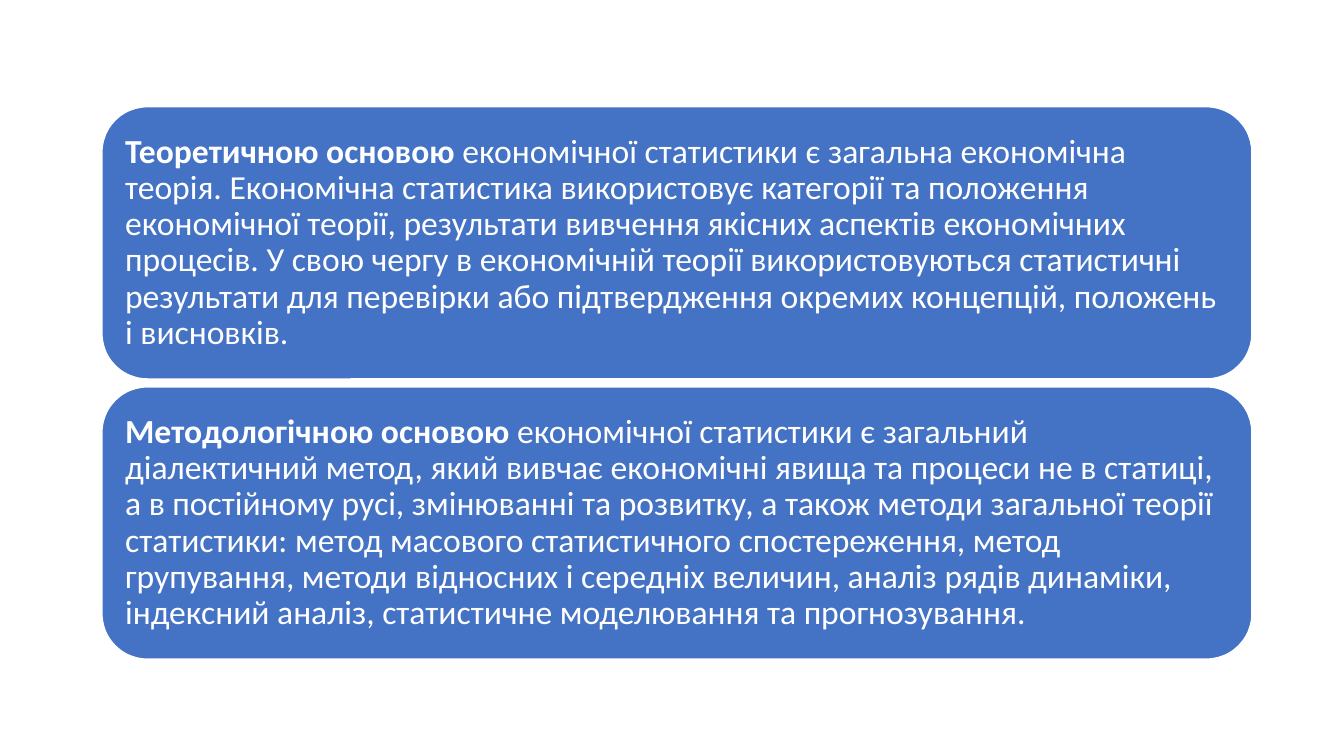
from dataclasses import dataclass

from pptx import Presentation
from pptx.dml.color import RGBColor
from pptx.enum.shapes import MSO_SHAPE as Shape
from pptx.enum.text import MSO_ANCHOR as Anchor, PP_ALIGN as Align
from pptx.util import Cm, Pt

BLUE, WHITE = "4472C4", "FFFFFF"
LEFT, TOP, WIDTH, HEIGHT = 2.57, 2.69, 28.98, 6.86
GAP = 0.2
FRAME = {
    "word_wrap": True,
    "vertical_anchor": Anchor.MIDDLE,
    "margin_left": Cm(0.25),
    "margin_right": Cm(0.25),
    "margin_top": Cm(0.25),
    "margin_bottom": Cm(0.25),
}
PARA = {"alignment": Align.LEFT, "line_spacing": 0.9}
FONT = {"name": "Calibri", "size": Pt(24)}


@dataclass(frozen=True)
class Card:
    term: str
    body: str


CARDS = (
    Card(
        "Теоретичною основою ",
        "економічної статистики є загальна економічна теорія. "
        "Економічна статистика використовує категорії та положення "
        "економічної теорії, результати вивчення якісних аспектів "
        "економічних процесів. У свою чергу в економічній теорії "
        "використовуються статистичні результати для перевірки або "
        "підтвердження окремих концепцій, положень і висновків.",
    ),
    Card(
        "Методологічною основою ",
        "економічної статистики є загальний діалектичний метод, який "
        "вивчає економічні явища та процеси не в статиці, а в постійному "
        "русі, змінюванні та розвитку, а також методи загальної теорії "
        "статистики: метод масового статистичного спостереження, метод "
        "групування, методи відносних і середніх величин, аналіз рядів "
        "динаміки, індексний аналіз, статистичне моделювання та "
        "прогнозування.",
    ),
)


def paint(color, code: str) -> None:
    color.rgb = RGBColor.from_string(code)


def style(target, values: dict) -> None:
    for name, value in values.items():
        setattr(target, name, value)


def add_run(para, text: str, bold: bool) -> None:
    run = para.add_run()
    run.text = text
    style(run.font, FONT | {"bold": bold})
    paint(run.font.color, WHITE)


def draw_card(slide, card: Card, top: float) -> None:
    box = slide.shapes.add_shape(
        Shape.ROUNDED_RECTANGLE, Cm(LEFT), Cm(top), Cm(WIDTH), Cm(HEIGHT)
    )
    box.shadow.inherit = False
    box.fill.solid()
    paint(box.fill.fore_color, BLUE)
    paint(box.line.color, WHITE)
    box.line.width = Pt(1)
    style(box.text_frame, FRAME)
    para = box.text_frame.paragraphs[0]
    style(para, PARA)
    add_run(para, card.term, True)
    add_run(para, card.body, False)


def main() -> None:
    deck = Presentation()
    deck.slide_width, deck.slide_height = Cm(33.87), Cm(19.05)
    slide = deck.slides.add_slide(deck.slide_layouts[6])
    for row, card in enumerate(CARDS):
        draw_card(slide, card, TOP + row * (HEIGHT + GAP))
    deck.save("out.pptx")


if __name__ == "__main__":
    main()
